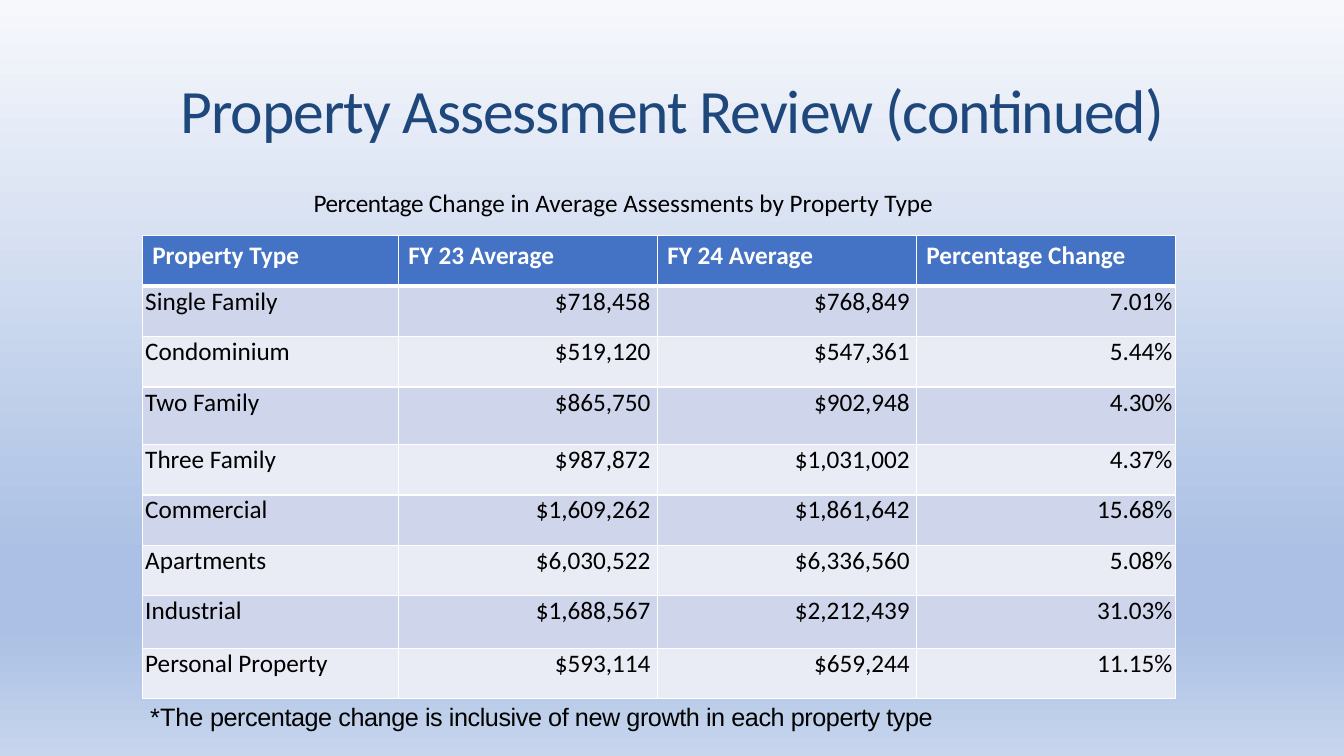
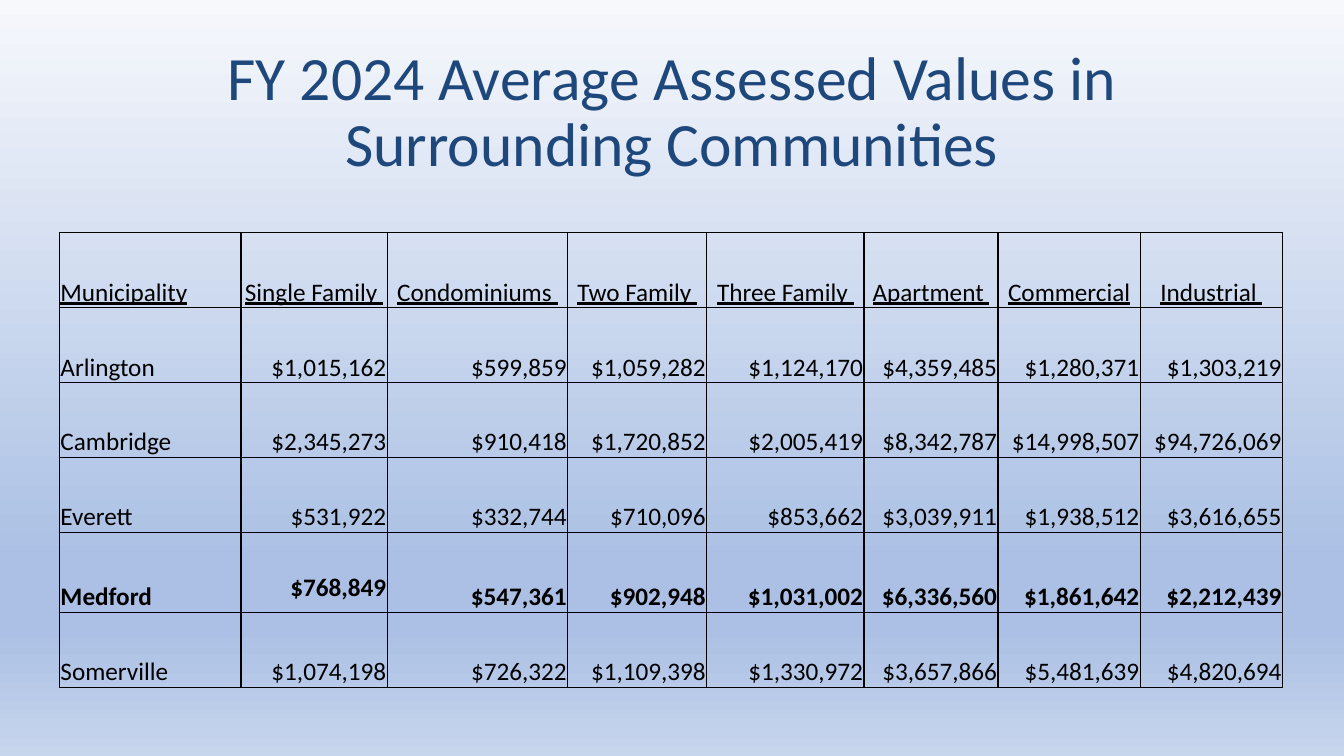
from copy import deepcopy

from lxml.etree import SubElement
from pptx import Presentation
from pptx.dml.color import RGBColor
from pptx.enum.text import MSO_ANCHOR, PP_ALIGN
from pptx.oxml.ns import qn
from pptx.util import Inches, Pt

WIDTH, HEIGHT = Inches(40 / 3), Inches(7.5)
NAVY = RGBColor(0x1E, 0x47, 0x7B)
BLUE = RGBColor(0x44, 0x72, 0xC4)
BAND_DARK = RGBColor(0xCF, 0xD5, 0xEA)
BAND_LIGHT = RGBColor(0xE9, 0xEB, 0xF5)
WHITE = RGBColor(0xFF, 0xFF, 0xFF)
BLACK = RGBColor(0, 0, 0)
SKY_MIDDLE = RGBColor(0xAB, 0xC0, 0xE4)
SKY = [
    (0, RGBColor(0xF6, 0xF8, 0xFC)),
    (0.74, SKY_MIDDLE),
    (0.83, SKY_MIDDLE),
    (1, RGBColor(0xC7, 0xD5, 0xED)),
]

CHANGES = [
    ["Property Type", "FY 23 Average", "FY 24 Average", "Percentage Change"],
    ["Single Family", "$718,458", "$768,849", "7.01%"],
    ["Condominium", "$519,120", "$547,361", "5.44%"],
    ["Two Family", "$865,750", "$902,948", "4.30%"],
    ["Three Family", "$987,872", "$1,031,002", "4.37%"],
    ["Commercial", "$1,609,262", "$1,861,642", "15.68%"],
    ["Apartments", "$6,030,522", "$6,336,560", "5.08%"],
    ["Industrial", "$1,688,567", "$2,212,439", "31.03%"],
    ["Personal Property", "$593,114", "$659,244", "11.15%"],
]
COMMUNITIES = [
    ["Municipality", "Single Family ", "Condominiums ", "Two Family ",
     "Three Family ", "Apartment ", "Commercial", "Industrial "],
    ["Arlington", "$1,015,162", "$599,859", "$1,059,282",
     "$1,124,170", "$4,359,485", "$1,280,371", "$1,303,219"],
    ["Cambridge", "$2,345,273", "$910,418", "$1,720,852",
     "$2,005,419", "$8,342,787", "$14,998,507", "$94,726,069"],
    ["Everett", "$531,922", "$332,744", "$710,096",
     "$853,662", "$3,039,911", "$1,938,512", "$3,616,655"],
    ["Medford", "$768,849", "$547,361", "$902,948",
     "$1,031,002", "$6,336,560", "$1,861,642", "$2,212,439"],
    ["Somerville", "$1,074,198", "$726,322", "$1,109,398",
     "$1,330,972", "$3,657,866", "$5,481,639", "$4,820,694"],
]


def across(percent):
    return round(WIDTH * percent / 100)


def down(percent):
    return round(HEIGHT * percent / 100)


def place(shape, left, top, width, height):
    shape.left, shape.top = across(left), down(top)
    shape.width, shape.height = across(width), down(height)


def set_font(paragraph, size, color, name="Calibri", bold=False):
    font = paragraph.font
    font.name, font.size, font.bold = name, Pt(size), bold
    font.color.rgb = color


def add_spans(paragraph, spans):
    for text, tracking in spans:
        paragraph.add_run().text = text
        if tracking:
            properties = paragraph.runs[-1].font
            properties.language_id = None
    for span, (text, tracking) in zip(paragraph.runs, spans):
        if tracking:
            span._r.get_or_add_rPr().set("spc", str(round(tracking * 100)))


def paint_background(master):
    fill = master.background.fill
    fill.gradient()
    fill.gradient_angle = 270
    stop_list = next(master.element.iter(qn("a:gsLst")))
    for _ in range(len(SKY) - len(stop_list)):
        stop_list.append(deepcopy(stop_list[0]))
    for stop, (position, color) in zip(fill.gradient_stops, SKY):
        stop.position = position
        stop.color.rgb = color


def add_page(deck, title, tracking=0):
    page = deck.slides.add_slide(deck.slide_layouts[5])
    box = page.shapes.title
    place(box, 6.9, 5.33, 86.25, 19.33)
    box.text_frame.vertical_anchor = MSO_ANCHOR.MIDDLE
    para = box.text_frame.paragraphs[0]
    add_spans(para, [(title, tracking)])
    para.alignment = PP_ALIGN.CENTER
    para.line_spacing = 0.9
    set_font(para, 44, NAVY)
    return page


def add_text(page, spans, area, indent, font_name="Calibri", line_spacing=1.0):
    box = page.shapes.add_textbox(0, 0, 0, 0)
    place(box, *area)
    frame = box.text_frame
    frame.word_wrap = True
    frame.margin_left = across(indent)
    para = frame.paragraphs[0]
    add_spans(para, spans)
    para.line_spacing = line_spacing
    set_font(para, 18, BLACK, font_name)


def add_grid(page, values, left, top, columns, rows):
    frame = page.shapes.add_table(
        len(rows), len(columns), across(left), down(top),
        across(sum(columns)), down(sum(rows)))
    table = frame.table
    table.first_row = table.horz_banding = False
    for column, width in zip(table.columns, columns):
        column.width = across(width)
    for row, height in zip(table.rows, rows):
        row.height = down(height)
    for row, texts in zip(table.rows, values):
        for cell, text in zip(row.cells, texts):
            cell.text = text
    return table


def set_margins(cell, left, top, right, bottom):
    cell.margin_left, cell.margin_top = Pt(left), Pt(top)
    cell.margin_right, cell.margin_bottom = Pt(right), Pt(bottom)


def set_borders(cell, color, top=1, bottom=1):
    properties = cell._tc.get_or_add_tcPr()
    widths = {"a:lnL": 1, "a:lnR": 1, "a:lnT": top, "a:lnB": bottom}
    for index, (side, width) in enumerate(widths.items()):
        line = SubElement(properties, qn(side), w=str(Pt(width)))
        SubElement(SubElement(line, qn("a:solidFill")), qn("a:srgbClr"), val=str(color))
        properties.insert(index, line)


def fill_cell(cell, color):
    cell.fill.solid()
    cell.fill.fore_color.rgb = color


def format_changes(table):
    last = len(table.columns) - 1
    for r, row in enumerate(table.rows):
        for c, cell in enumerate(row.cells):
            para = cell.text_frame.paragraphs[0]
            set_borders(cell, WHITE, 3 if r == 1 else 1, 3 if r == 0 else 1)
            if r == 0:
                fill_cell(cell, BLUE)
                set_font(para, 18, WHITE, bold=True)
                continue
            fill_cell(cell, BAND_DARK if r % 2 else BAND_LIGHT)
            set_font(para, 18, BLACK)
            set_margins(cell, 2.2, 0, 2.2 if c == last else 4.8, 0)
            para.alignment = PP_ALIGN.RIGHT if c else PP_ALIGN.LEFT


def format_communities(table):
    for r, row in enumerate(table.rows):
        home = row.cells[0].text == "Medford"
        for c, cell in enumerate(row.cells):
            para = cell.text_frame.paragraphs[0]
            cell.fill.background()
            set_borders(cell, BLACK)
            set_margins(cell, 0.7, 0.7, 0.7, 6.5 if home and c == 1 else 0)
            cell.vertical_anchor = MSO_ANCHOR.BOTTOM
            set_font(para, 18, BLACK, bold=home)
            para.font.underline = r == 0
            if c:
                para.alignment = PP_ALIGN.RIGHT if r else PP_ALIGN.CENTER


def build_changes(deck):
    page = add_page(deck, "Property Assessment Review (continued)", -0.8)
    add_text(page, [("Percentage ", -0.3),
                    ("Change in Average Assessments by Property Type", 0)],
             (10.58, 24.13, 64.05, 5.33), 12.75)
    table = add_grid(page, CHANGES, 10.58, 31.2, [19.05] + [19.28] * 3,
                     [6.67] * 3 + [7.6] + [6.67] * 3 + [6.93, 6.67])
    format_changes(table)
    add_text(page, [("*The", 0),
                    (" percentage change is inclusive of new growth in each property type", -0.3)],
             (2.48, 92, 85.13, 5.2), 8.7, "Arial", 1.03)


def build_communities(deck):
    page = add_page(deck, "FY 2024 Average Assessed Values in Surrounding Communities")
    table = add_grid(page, COMMUNITIES, 4.43, 30.8,
                     [13.5, 10.88, 13.43, 10.35, 11.7, 9.98, 10.58, 10.58],
                     [9.92] * 4 + [10.53, 9.92])
    format_communities(table)


def main():
    deck = Presentation()
    deck.slide_width, deck.slide_height = WIDTH, HEIGHT
    paint_background(deck.slide_master)
    build_changes(deck)
    build_communities(deck)
    deck.save("out.pptx")


if __name__ == "__main__":
    main()
